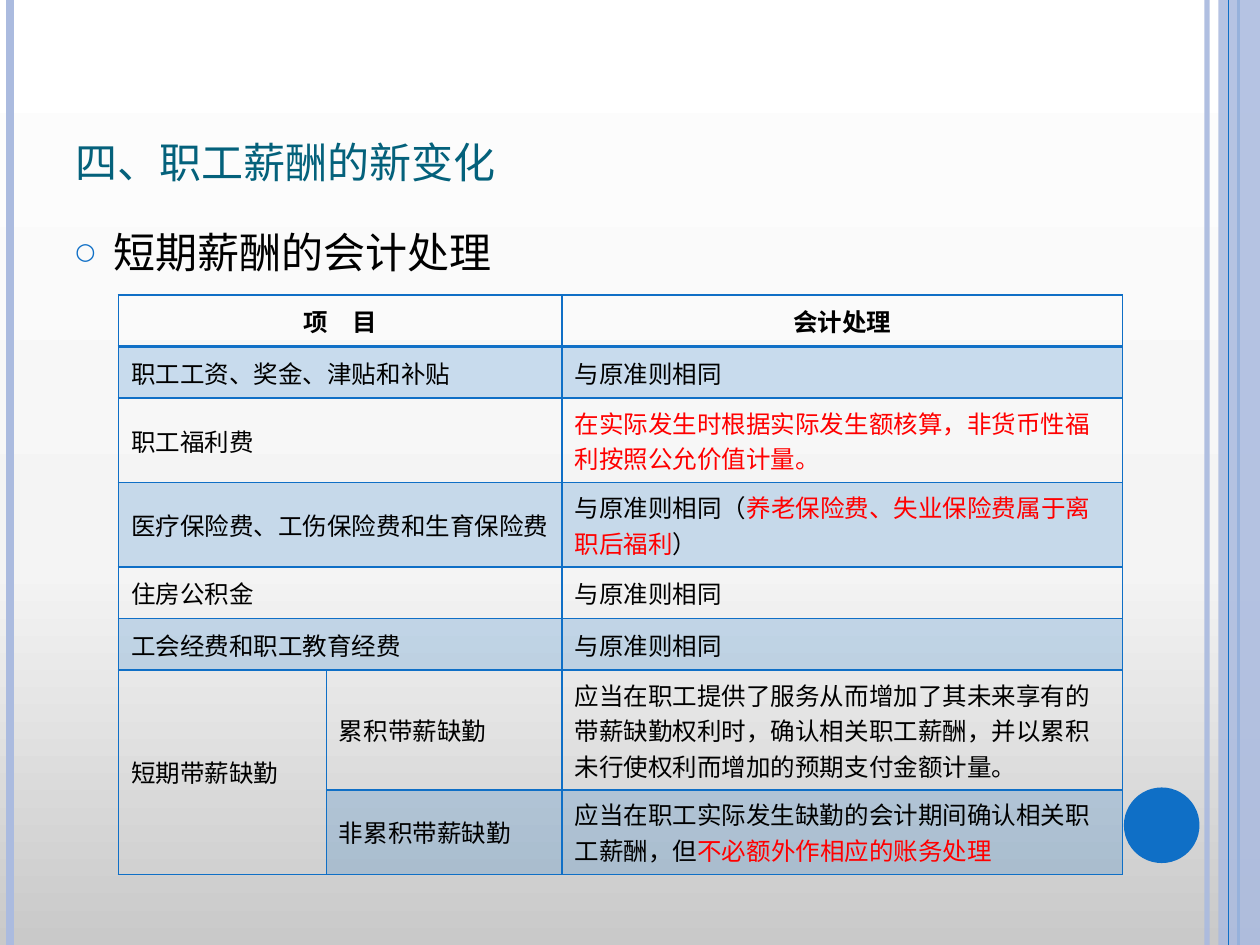
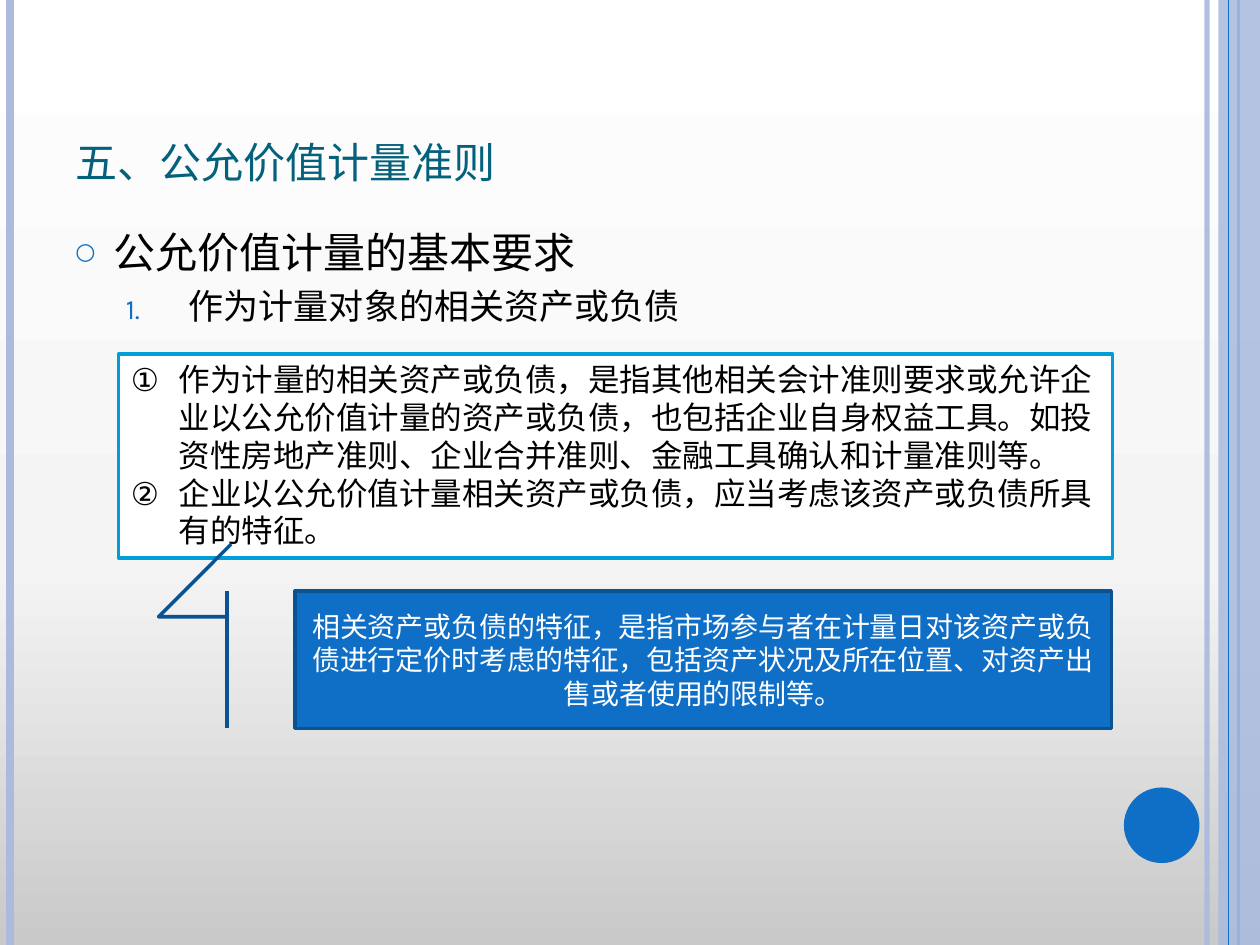
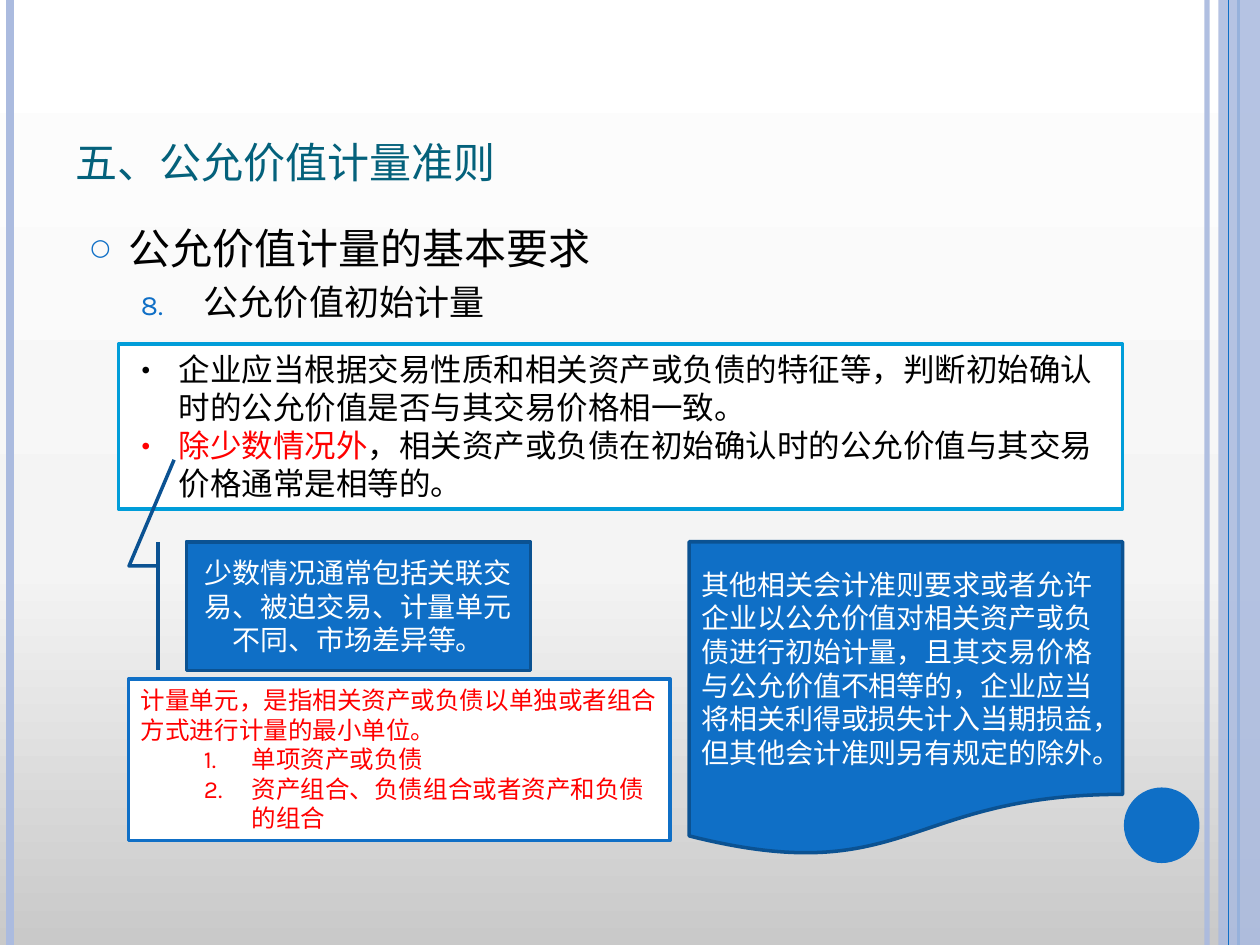
from lxml import etree
from pptx import Presentation
from pptx.dml.color import RGBColor
from pptx.enum.shapes import MSO_CONNECTOR, MSO_SHAPE
from pptx.enum.text import MSO_ANCHOR, MSO_AUTO_SIZE, PP_ALIGN
from pptx.oxml.ns import qn
from pptx.util import Inches, Pt

STRAIGHT = MSO_CONNECTOR.STRAIGHT
RECT = MSO_SHAPE.RECTANGLE
OVAL = MSO_SHAPE.OVAL
CALLOUT = MSO_SHAPE.LINE_CALLOUT_2_BORDER_AND_ACCENT_BAR
PAGE = MSO_SHAPE.FLOWCHART_DOCUMENT
TOP, MIDDLE, BOTTOM = MSO_ANCHOR.TOP, MSO_ANCHOR.MIDDLE, MSO_ANCHOR.BOTTOM
LEFT, CENTER = PP_ALIGN.LEFT, PP_ALIGN.CENTER
GROW = MSO_AUTO_SIZE.SHAPE_TO_FIT_TEXT

COLORS = {
    "blue": "0F6FC6", "navy": "0B5292", "cyan": "009DD9", "pale": "ABBBDF",
    "teal": "04617B", "red": "FF0000", "black": "000000", "white": "FFFFFF",
}
SHADES = [(0, "C9C9C9"), (40, "F4F4F4"), (100, "FFFFFF")]
FONT = "Karla"
HAN = "Noto Sans CJK SC"
SAME = "与原准则相同"


def rgb(name):
    return RGBColor.from_string(COLORS[name])


def add(node, tag, **attrs):
    return etree.SubElement(node, qn(tag), {k: str(v) for k, v in attrs.items()})


def fade(node, percent):
    for color in node.iter(qn("a:srgbClr")):
        add(color, "a:alpha", val=percent * 1000)


def shade(master):
    fill = master.background.fill
    fill.gradient()
    fill.gradient_angle = 90
    stops = master.element.xpath(".//p:bg//a:gsLst")[0]
    for stop in list(stops):
        stops.remove(stop)
    for place, color in SHADES:
        add(add(stops, "a:gs", pos=place * 1000), "a:srgbClr", val=color)


def rule(slide, x, color, width, alpha=None):
    line = slide.shapes.add_connector(
        STRAIGHT, Inches(x), 0, Inches(x), Inches(7.5))
    line.line.color.rgb = rgb(color)
    line.line.width = Pt(width)
    props = line._element.spPr
    if alpha:
        fade(props, alpha)
    add(props, "a:effectLst")


def shape(slide, kind, box, fill, edge=None, adjust=()):
    item = slide.shapes.add_shape(kind, *map(Inches, box))
    item.shadow.inherit = False
    item.fill.solid()
    item.fill.fore_color.rgb = rgb(fill)
    if edge:
        item.line.color.rgb = rgb(edge)
        item.line.width = Pt(2)
    else:
        item.line.fill.background()
    for i, value in enumerate(adjust):
        item.adjustments[i] = value
    return item


def bullet(para, mark, indent, hang, color=None, size=None, start=None, font=HAN):
    props = para._p.get_or_add_pPr()
    props.set("marL", str(Inches(indent)))
    props.set("indent", str(-Inches(hang)))
    if color:
        add(add(props, "a:buClr"), "a:srgbClr", val=COLORS[color])
    if size:
        add(props, "a:buSzPct", val=size * 1000)
    add(props, "a:buFont", typeface=font)
    if len(mark) == 1:
        add(props, "a:buChar", char=mark)
    else:
        auto = add(props, "a:buAutoNum", type=mark)
        if start:
            auto.set("startAt", str(start))


def write(para, parts, size, color, align=LEFT, font=FONT, han=FONT, bold=False):
    para.alignment = align
    style = para.font
    style.size, style.bold, style.name = Pt(size), bold, font
    style.color.rgb = rgb(color)
    add(style._element, "a:ea", typeface=han)
    for part in [parts] if isinstance(parts, str) else parts:
        text, tint = (part, None) if isinstance(part, str) else part
        run = para.add_run()
        run.text = text
        if tint:
            run.font.color.rgb = rgb(tint)


def setup(item, anchor):
    frame = item.text_frame
    frame.word_wrap = True
    frame.vertical_anchor = anchor
    return frame


def textbox(slide, box, anchor):
    return setup(slide.shapes.add_textbox(*map(Inches, box)), anchor)


def base(deck, title):
    slide = deck.slides.add_slide(deck.slide_layouts[6])
    rule(slide, 9.58, "pale", 3, 93)
    rule(slide, 0.08, "pale", 4.5)
    rule(slide, 9.83, "blue", 1.5)
    band = shape(slide, RECT, (9.67, 0, 0.33, 7.5), "pale")
    fade(band._element.spPr, 87)
    rule(slide, 9.75, "blue", 0.75)
    shape(slide, OVAL, (8.92, 6.25, 0.6, 0.6), "blue")
    para = textbox(slide, (0.5, 0.3, 8.17, 1.25), BOTTOM).paragraphs[0]
    write(para, title, 30, "teal")
    para.font._element.set("cap", "small")
    return slide


def body(slide, left, top, head, point=None, start=None):
    frame = textbox(slide, (left, top, 8.17, 5.33), TOP)
    para = frame.paragraphs[0]
    bullet(para, "○", 0.3, 0.3, "blue", 55, font=FONT)
    para.space_before = Pt(6)
    write(para, head, 24, "black")
    if point:
        para = frame.add_paragraph()
        bullet(para, "arabicPeriod", 0.9, 0.5, "blue", 80, start)
        para.space_before = Pt(4)
        write(para, point, 20, "black")


def panel(slide, box, edge):
    frame = setup(shape(slide, RECT, box, "white", edge), TOP)
    frame.auto_size = GROW
    return frame


def points(slide, box, mark, items):
    frame = panel(slide, box, "cyan")
    for i, parts in enumerate(items):
        para = frame.add_paragraph() if i else frame.paragraphs[0]
        bullet(para, mark, 0.38, 0.38)
        write(para, parts, 18, "black")


def note(slide, kind, box, text, align, adjust=()):
    item = shape(slide, kind, box, "blue", "navy", adjust)
    write(setup(item, MIDDLE).paragraphs[0], text, 16, "white", align)


def callout(slide, box, text, tip):
    note(slide, CALLOUT, box, text, CENTER,
         (0.188, -0.083, 0.188, -0.167, *tip))


def border(cell, row):
    props = cell._tc.get_or_add_tcPr()
    thick = {"T": row == 1, "B": row == 0}
    for side in "LRTB":
        width = Pt(2 if thick.get(side) else 1)
        line = add(props, f"a:ln{side}", w=width)
        add(add(line, "a:solidFill"), "a:srgbClr", val=COLORS["blue"])


def grid(slide, rows):
    widths = (1.65, 1.87, 4.45)
    heights = (0.41, 0.41, 0.67, 0.67, 0.41, 0.41, 0.95, 0.67)
    table = slide.shapes.add_table(
        len(rows), 3, Inches(0.94), Inches(2.34),
        Inches(sum(widths)), Inches(sum(heights))).table
    table.first_row = table.horz_banding = False
    for column, width in zip(table.columns, widths):
        column.width = Inches(width)
    for line, height in zip(table.rows, heights):
        line.height = Inches(height)
    for r, row in enumerate(rows):
        for c, parts in enumerate(row):
            cell = table.cell(r, c)
            border(cell, r)
            if r % 2:
                cell.fill.solid()
                cell.fill.fore_color.rgb = rgb("blue")
                fade(cell._tc.tcPr.find(qn("a:solidFill")), 20)
            else:
                cell.fill.background()
            cell.vertical_anchor = MIDDLE
            if parts:
                write(cell.text_frame.paragraphs[0], parts, 14, "black",
                      LEFT if r else CENTER, han=HAN, bold=r == 0)
        if r < 6:
            table.cell(r, 0).merge(table.cell(r, 1))
    table.cell(6, 0).merge(table.cell(7, 0))


def pay(deck):
    slide = base(deck, "四、职工薪酬的新变化")
    body(slide, 0.5, 1.75, "短期薪酬的会计处理")
    grid(slide, [
        ("项　目", None, "会计处理"),
        ("职工工资、奖金、津贴和补贴", None, SAME),
        ("职工福利费", None,
         [("在实际发生时根据实际发生额核算，非货币性福利按照公允价值计量。", "red")]),
        ("医疗保险费、工伤保险费和生育保险费", None,
         [SAME + "（", ("养老保险费、失业保险费属于离职后福利", "red"), "）"]),
        ("住房公积金", None, SAME),
        ("工会经费和职工教育经费", None, SAME),
        ("短期带薪缺勤", "累积带薪缺勤",
         "应当在职工提供了服务从而增加了其未来享有的带薪缺勤权利时，"
         "确认相关职工薪酬，并以累积未行使权利而增加的预期支付金额计量。"),
        (None, "非累积带薪缺勤",
         ["应当在职工实际发生缺勤的会计期间确认相关职工薪酬，但",
          ("不必额外作相应的账务处理", "red")]),
    ])


def asset(deck):
    slide = base(deck, "五、公允价值计量准则")
    body(slide, 0.5, 1.75, "公允价值计量的基本要求", "作为计量对象的相关资产或负债")
    points(slide, (0.94, 2.81, 7.89, 1.62), "circleNumDbPlain", [
        "作为计量的相关资产或负债，是指其他相关会计准则要求或允许企业以公允价值计量的"
        "资产或负债，也包括企业自身权益工具。如投资性房地产准则、企业合并准则、"
        "金融工具确认和计量准则等。",
        "企业以公允价值计量相关资产或负债，应当考虑该资产或负债所具有的特征。",
    ])
    callout(slide, (2.34, 4.69, 6.48, 1.09),
            "相关资产或负债的特征，是指市场参与者在计量日对该资产或负债进行定价时考虑的"
            "特征，包括资产状况及所在位置、对资产出售或者使用的限制等。",
            (-0.342, -0.078))


def initial(deck):
    slide = base(deck, "五、公允价值计量准则")
    body(slide, 0.62, 1.72, "公允价值计量的基本要求", "公允价值初始计量", 8)
    points(slide, (0.94, 2.73, 7.97, 1.31), "•", [
        "企业应当根据交易性质和相关资产或负债的特征等，"
        "判断初始确认时的公允价值是否与其交易价格相一致。",
        [("除少数情况外", "red"),
         "，相关资产或负债在初始确认时的公允价值与其交易价格通常是相等的。"],
    ])
    callout(slide, (1.48, 4.3, 2.73, 1.02),
            "少数情况通常包括关联交易、被迫交易、计量单元不同、市场差异等。",
            (-0.638, -0.036))
    frame = panel(slide, (1.02, 5.39, 4.3, 1.28), "blue")
    write(frame.paragraphs[0],
          "计量单元，是指相关资产或负债以单独或者组合方式进行计量的最小单位。", 14, "red")
    for text in ("单项资产或负债", "资产组合、负债组合或者资产和负债的组合"):
        para = frame.add_paragraph()
        bullet(para, "arabicPeriod", 0.88, 0.38)
        write(para, text, 14, "red", font=HAN)
    note(slide, PAGE, (5.47, 4.3, 3.44, 2.5),
         "其他相关会计准则要求或者允许企业以公允价值对相关资产或负债进行初始计量，"
         "且其交易价格与公允价值不相等的，企业应当将相关利得或损失计入当期损益，"
         "但其他会计准则另有规定的除外。", LEFT)


def main():
    deck = Presentation()
    deck.slide_width, deck.slide_height = Inches(10), Inches(7.5)
    shade(deck.slide_master)
    pay(deck)
    asset(deck)
    initial(deck)
    deck.save("out.pptx")


if __name__ == "__main__":
    main()
